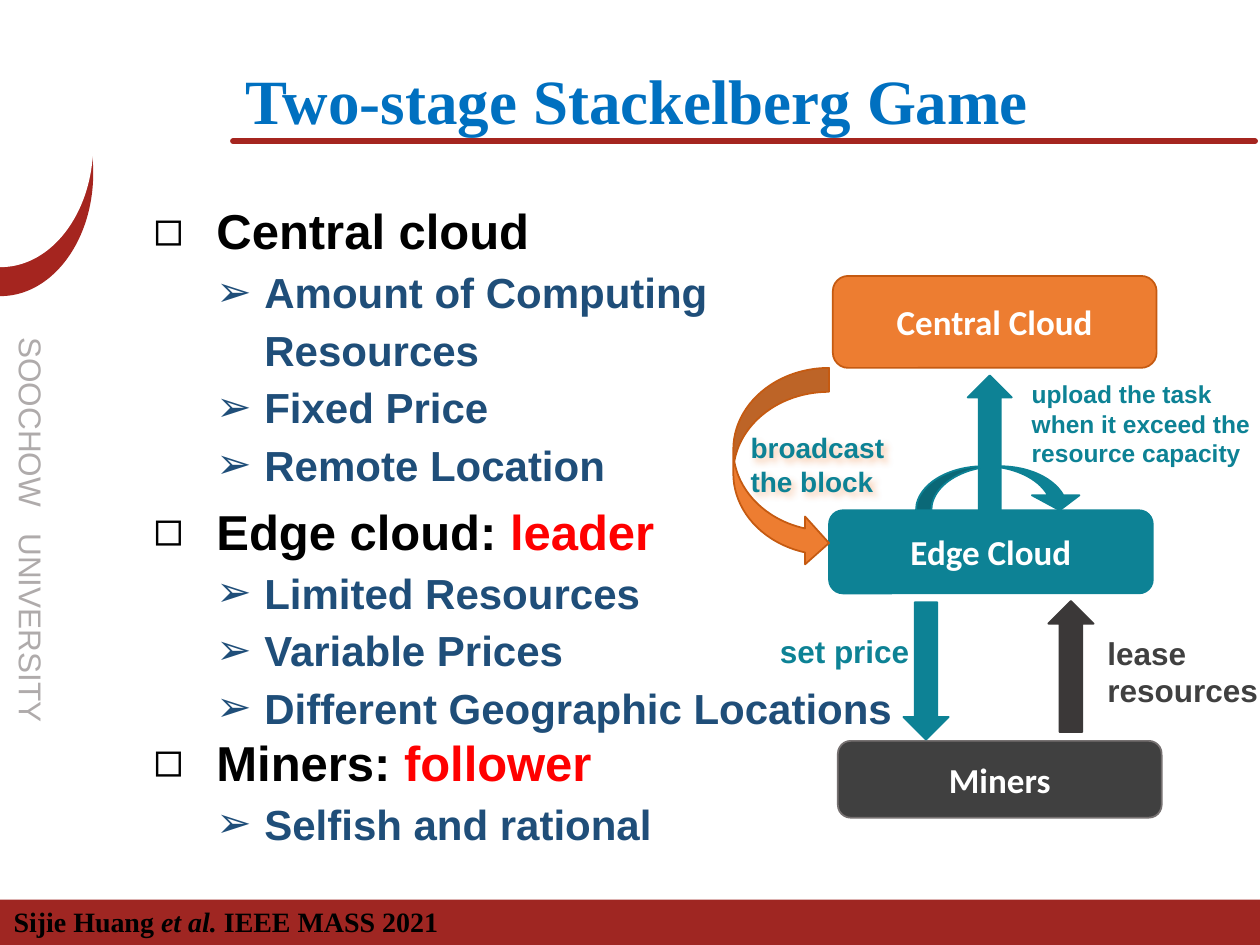
"""Build the Two-stage Stackelberg Game slide."""
import lxml.etree
import pptx
import pptx.dml.color
import pptx.enum.shapes
import pptx.enum.text
import pptx.oxml.ns
import pptx.util
from dataclasses import dataclass
from pptx.util import Inches


@dataclass(frozen=True)
class Theme:
    serif: str = "Times New Roman"
    sans: str = "Arial"
    label: str = "Calibri"
    black: str = "000000"
    white: str = "FFFFFF"
    crimson: str = "A5251F"
    footer_red: str = "9F2622"
    pale_gray: str = "AFABAB"
    title_blue: str = "0070C0"
    detail_blue: str = "1F4E79"
    red: str = "FF0000"
    orange: str = "ED7D31"
    orange_edge: str = "C55A11"
    teal: str = "0D8295"
    charcoal: str = "404040"
    charcoal_edge: str = "767171"
    arrow_gray: str = "3B3838"
    title_size: int = 36
    topic_size: int = 28
    detail_size: int = 24
    node_size: int = 20
    large_size: int = 18
    medium_size: int = 16
    small_size: int = 14


theme = Theme()
rgb = pptx.dml.color.RGBColor.from_string
qn = pptx.oxml.ns.qn
kinds = pptx.enum.shapes.MSO_SHAPE
anchors = pptx.enum.text.MSO_ANCHOR
aligns = pptx.enum.text.PP_ALIGN
fits = pptx.enum.text.MSO_AUTO_SIZE


def write(para, pieces, size, font, bold=True):
    for words, colour in pieces:
        span = para.add_run()
        span.text = words
        span.font.size = pptx.util.Pt(size)
        span.font.name = font
        span.font.bold = bold
        span.font.color.rgb = rgb(colour)


def draw(kind, frame, fill, edge=None):
    shape = page.shapes.add_shape(kind, *map(Inches, frame))
    shape.shadow.inherit = False
    shape.fill.solid()
    shape.fill.fore_color.rgb = rgb(fill)
    if edge:
        shape.line.color.rgb = rgb(edge)
        shape.line.width = pptx.util.Pt(1)
    else:
        shape.line.fill.background()
    return shape


deck = pptx.Presentation()
deck.slide_width, deck.slide_height = Inches(10), Inches(7.5)
page = deck.slides.add_slide(deck.slide_layouts[5])

for top, colour in ((0.4, theme.crimson), (0.17, theme.white)):
    draw(kinds.OVAL, (-0.73, top, 1.47, 1.95), colour)

rule = page.shapes.add_connector(
    pptx.enum.shapes.MSO_CONNECTOR.STRAIGHT, Inches(1.85), Inches(1.12), Inches(9.96), Inches(1.12))
rule.line.color.rgb = rgb(theme.crimson)
rule.line.width = pptx.util.Pt(3.5)
rule.line._get_or_add_ln().set("cap", "rnd")
lxml.etree.SubElement(rule._element.spPr, qn("a:effectLst"))

draw(kinds.RECTANGLE, (0, 7.14, 10, 0.36), theme.footer_red)

title = page.shapes.title
title.left, title.top, title.width, title.height = map(Inches, (1.85, 0, 8.14, 1.15))
title.text_frame.auto_size = fits.NONE
title.text_frame.vertical_anchor = anchors.BOTTOM
heading = title.text_frame.paragraphs[0]
heading.alignment = aligns.LEFT
heading.line_spacing = 0.9
write(heading, [("Two-stage Stackelberg Game", theme.title_blue)], theme.title_size, theme.serif)

outline = [
    (0, 1.14, [("Central cloud", theme.black)]),
    (1, 1.14, [("Amount of Computing Resources", theme.detail_blue)]),
    (1, 1.14, [("Fixed Price", theme.detail_blue)]),
    (1, 1.14, [("Remote Location", theme.detail_blue)]),
    (0, 1.2, [("Edge cloud: ", theme.black), ("leader", theme.red)]),
    (1, 1.14, [("Limited Resources", theme.detail_blue)]),
    (1, 1.14, [("Variable Prices", theme.detail_blue)]),
    (1, 1.14, [("Different Geographic Locations", theme.detail_blue)]),
    (0, 1.0, [("Miners: ", theme.black), ("follower", theme.red)]),
    (1, 1.14, [("Selfish and rational", theme.detail_blue)]),
]
levels = [("◻", 0.5, 0.5, theme.topic_size), ("➢", 0.88, 0.38, theme.detail_size)]
box = page.shapes.add_textbox(*map(Inches, (1.12, 1.48, 6.13, 6.36)))
box.text_frame.word_wrap = True
box.text_frame.auto_size = fits.SHAPE_TO_FIT_TEXT
for index, (level, spacing, pieces) in enumerate(outline):
    para = box.text_frame.add_paragraph() if index else box.text_frame.paragraphs[0]
    mark, margin, hang, size = levels[level]
    para.level = level
    para.line_spacing = spacing
    settings = para._p.get_or_add_pPr()
    settings.set("marL", str(Inches(margin)))
    settings.set("indent", str(-Inches(hang)))
    lxml.etree.SubElement(settings, qn("a:buFont"), typeface=theme.sans)
    lxml.etree.SubElement(settings, qn("a:buChar"), char=mark)
    write(para, pieces, size, theme.sans)

nodes = [
    ("Central Cloud", (6.61, 2.19, 2.57, 0.73), theme.orange, theme.orange_edge),
    ("Edge Cloud", (6.58, 4.05, 2.57, 0.66), theme.teal, theme.teal),
    ("Miners", (6.65, 5.88, 2.57, 0.61), theme.charcoal, theme.charcoal_edge),
]
for name, frame, fill, edge in nodes:
    node = draw(kinds.ROUNDED_RECTANGLE, frame, fill, edge)
    node.text_frame.vertical_anchor = anchors.MIDDLE
    para = node.text_frame.paragraphs[0]
    para.alignment = aligns.CENTER
    write(para, [(name, theme.white)], theme.node_size, theme.label)

arrows = [
    (kinds.UP_ARROW, (8.32, 4.77, 0.36, 1.04), theme.arrow_gray, theme.arrow_gray, ()),
    (kinds.DOWN_ARROW, (7.17, 4.78, 0.36, 1.09), theme.teal, theme.teal, ()),
    (kinds.UP_ARROW, (7.68, 2.98, 0.35, 1.07), theme.teal, theme.teal, ()),
    (kinds.CURVED_DOWN_ARROW, (7.27, 3.7, 1.33, 0.35), theme.teal, theme.teal, (0.35, 1.08, 0.34)),
    (kinds.CURVED_RIGHT_ARROW, (5.82, 2.92, 0.76, 1.58), theme.orange, theme.orange_edge, ()),
]
for kind, frame, fill, edge, adjustments in arrows:
    arrow = draw(kind, frame, fill, edge)
    for index, value in enumerate(adjustments):
        arrow.adjustments[index] = value

captions = [
    ("set price", (6.09, 4.97, 1.41, 0.4), theme.large_size, theme.teal),
    ("lease resources", (8.69, 4.98, 1.97, 0.71), theme.large_size, theme.charcoal),
    ("upload the task when it exceed the resource capacity", (8.09, 2.96, 2.13, 0.81),
     theme.small_size, theme.teal),
    ("broadcast the block", (5.86, 3.37, 1.4, 0.64), theme.medium_size, theme.teal),
]
for words, frame, size, colour in captions:
    caption = page.shapes.add_textbox(*map(Inches, frame))
    caption.text_frame.word_wrap = True
    caption.text_frame.auto_size = fits.SHAPE_TO_FIT_TEXT
    write(caption.text_frame.paragraphs[0], [(words, colour)], size, theme.sans)

effects = lxml.etree.SubElement(caption._element.spPr, qn("a:effectLst"))
glow = lxml.etree.SubElement(
    effects, qn("a:outerShdw"), blurRad="50800", dist="38100", dir="2700000", algn="tl", rotWithShape="0")
tint = lxml.etree.SubElement(glow, qn("a:srgbClr"), val=theme.orange)
lxml.etree.SubElement(tint, qn("a:alpha"), val="40000")

school = page.shapes.add_textbox(*map(Inches, (-0.05, 2.58, 0.5, 4.21)))
school.text_frame.word_wrap = True
school.text_frame._txBody.bodyPr.set("vert", "eaVert")
para = school.text_frame.paragraphs[0]
write(para, [(words, theme.pale_gray) for words in ("SOOCHOW", " ", "UNIVERSITY")],
      theme.large_size, theme.sans, False)
para.runs[1].font._element.set("spc", "1000")

citation = page.shapes.add_textbox(*map(Inches, (0.01, 7.13, 4.12, 0.37)))
citation.text_frame.word_wrap = True
citation.text_frame.auto_size = fits.SHAPE_TO_FIT_TEXT
para = citation.text_frame.paragraphs[0]
write(para, [(words, theme.black) for words in ("Sijie Huang ", "et al. ", "IEEE MASS 2021")],
      theme.medium_size, theme.serif)
para.runs[1].font.italic = True

deck.save("out.pptx")
